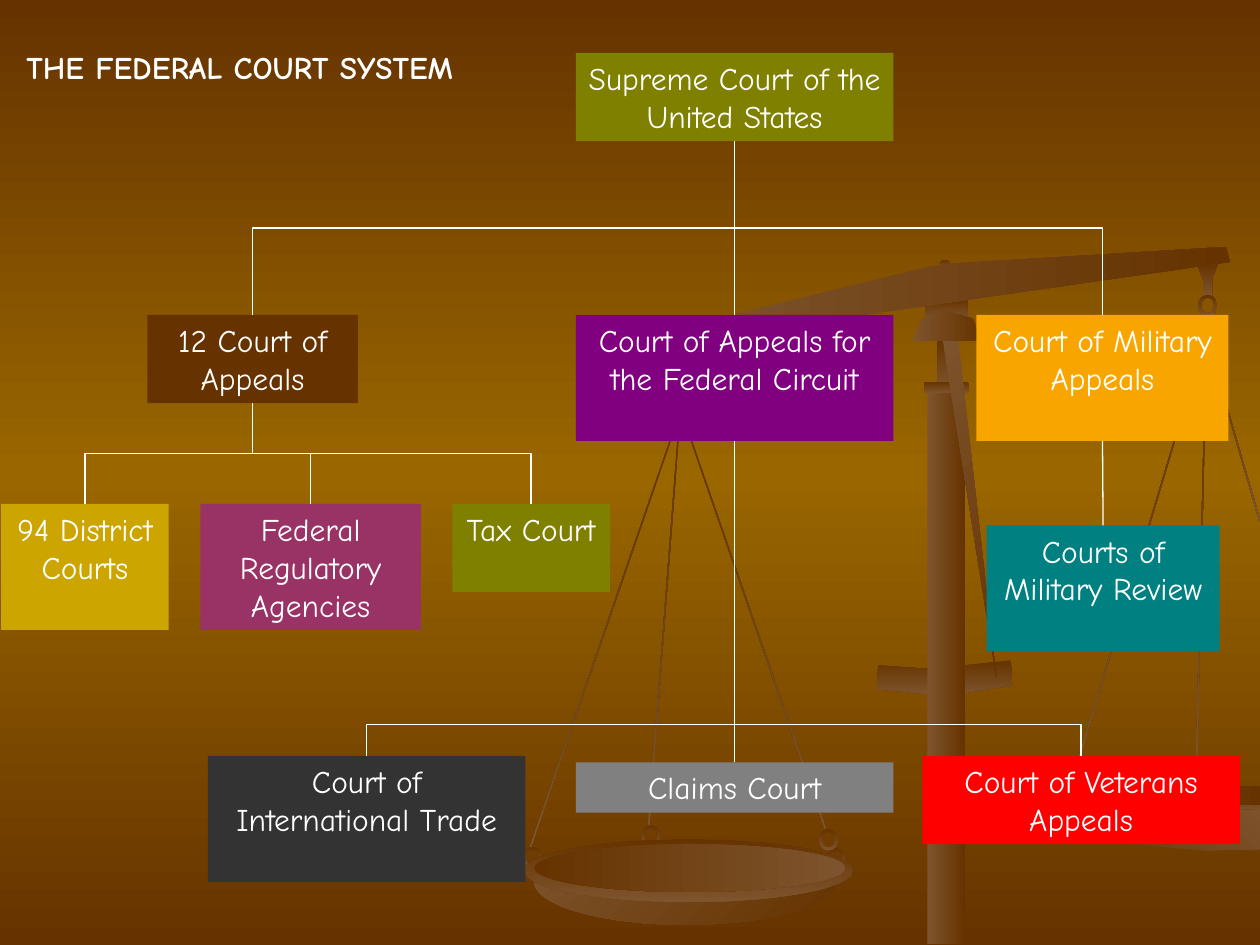
from copy import deepcopy
from dataclasses import dataclass
from math import atan2, degrees, hypot
from typing import Union

from lxml.etree import SubElement
from pptx import Presentation
from pptx.dml.color import RGBColor
from pptx.enum.shapes import MSO_CONNECTOR as Connector, MSO_SHAPE as Preset
from pptx.enum.text import MSO_ANCHOR as Anchor, MSO_AUTO_SIZE as AutoSize, PP_ALIGN as Align
from pptx.oxml.ns import qn
from pptx.util import Pt

PX = 9144
FONT = "Comic Neue"
WHITE = RGBColor.from_string("FFFFFF")
BROWN = RGBColor.from_string("663300")
GOLD = RGBColor.from_string("996600")
BRONZE = RGBColor.from_string("7E542E")
OLIVE = RGBColor.from_string("808000")
PURPLE = RGBColor.from_string("800080")
PLUM = RGBColor.from_string("993366")
MUSTARD = RGBColor.from_string("CCA500")
ORANGE = RGBColor.from_string("F8A500")
TEAL = RGBColor.from_string("008080")
CHARCOAL = RGBColor.from_string("333333")
GRAY = RGBColor.from_string("808080")
RED = RGBColor.from_string("FF0000")
DARK_TO_LIGHT = (BROWN, BRONZE)
LIGHT_TO_DARK = (BRONZE, BROWN)
TOP, BOTTOM = 0, 2


@dataclass(frozen=True)
class Part:
    preset: Preset
    box: tuple
    rotation: float = 0
    colors: tuple = DARK_TO_LIGHT
    angle: int = 90


@dataclass(frozen=True)
class Outline:
    points: list
    colors: tuple = DARK_TO_LIGHT
    angle: int = 90


@dataclass(frozen=True)
class Court:
    name: str
    center: int
    top: int
    width: int
    height: int
    color: RGBColor


@dataclass(frozen=True)
class Branch:
    parent: str
    children: tuple
    side: int = BOTTOM
    bend: float = 0.5


def rope(apex: tuple, end: tuple) -> Part:
    across, down = apex[0] - end[0], end[1] - apex[1]
    length = round(hypot(across, down))
    left, top = (apex[0] + end[0]) // 2, (apex[1] + end[1] - length) // 2
    return Part(Preset.RECTANGLE, (left, top, 1, length), degrees(atan2(across, down)))


def ring(left: int, top: int) -> Part:
    return Part(Preset.DONUT, (left, top, 15, 17))


LEFT_APEX, RIGHT_APEX = (540, 325), (957, 266)
SCALES = [
    Part(Preset.RECTANGLE, (734, 237, 34, 18)),
    Part(Preset.OVAL, (746, 206, 8, 8)),
    *[rope(RIGHT_APEX, end) for end in ((853, 612), (949, 613), (1000, 414))],
    *[rope(LEFT_APEX, end) for end in ((655, 658), (420, 674), (515, 655))],
    Outline([(697, 528), (739, 531), (802, 524), (804, 544), (751, 552), (696, 547)]),
    Outline([(1000, 626), (865, 623), (827, 628), (852, 638), (914, 644), (1000, 645)]),
    Outline([(831, 633), (852, 657), (892, 670), (957, 675), (1000, 674), (1000, 643),
             (886, 640)], angle=315),
    Outline([(1000, 624), (862, 623), (834, 628), (893, 637), (1000, 639)], LIGHT_TO_DARK, 0),
    Outline([(967, 209), (950, 210), (955, 222), (955, 236), (962, 236), (962, 221)]),
    *[ring(*corner) for corner in ((951, 234), (950, 250))],
    Outline([(973, 196), (976, 208), (525, 273), (524, 264), (737, 212), (759, 209)],
            LIGHT_TO_DARK, 0),
    *[ring(*corner) for corner in ((509, 655), (656, 673), (415, 672))],
    Part(Preset.OVAL, (424, 666, 240, 68), 0, LIGHT_TO_DARK, 45),
    Part(Preset.OVAL, (416, 666, 261, 50)),
    Part(Preset.OVAL, (424, 670, 247, 38), angle=0),
    ring(650, 658),
    Part(Preset.RECTANGLE, (736, 308, 30, 441), 0, LIGHT_TO_DARK, 0),
    Part(Preset.RECTANGLE, (744, 268, 13, 42)),
    Part(Preset.ROUNDED_RECTANGLE, (733, 303, 36, 9)),
    Outline([(791, 539), (748, 268), (760, 265)], LIGHT_TO_DARK, 45),
    Outline([(752, 247), (772, 253), (779, 271), (724, 271), (732, 253)], LIGHT_TO_DARK, 0),
]

SUPREME = "Supreme Court of the United States"
FEDERAL = "Court of Appeals for the Federal Circuit"
APPEALS = "12 Court of Appeals"
TAX = "Tax Court"
AGENCIES = "Federal Regulatory Agencies"
DISTRICT = "94 District Courts"
MILITARY = "Court of Military Appeals"
REVIEW = "Courts of Military Review"
TRADE = "Court of International Trade"
CLAIMS = "Claims Court"
VETERANS = "Court of Veterans Appeals"

MIDDLE, WIDE = 583, 252
SHORT, MEDIUM, TALL = 40, 70, 100
APPEALS_ROW, LOWER_ROW, SPECIAL_ROW = 250, 400, 600
COURTS = [
    Court(SUPREME, MIDDLE, 42, WIDE, MEDIUM, OLIVE),
    Court(FEDERAL, MIDDLE, APPEALS_ROW, WIDE, TALL, PURPLE),
    Court(APPEALS, 200, APPEALS_ROW, 167, MEDIUM, BROWN),
    Court(TAX, 421, LOWER_ROW, 125, MEDIUM, OLIVE),
    Court(AGENCIES, 246, LOWER_ROW, 175, TALL, PLUM),
    Court(DISTRICT, 67, LOWER_ROW, 133, TALL, MUSTARD),
    Court(MILITARY, 875, APPEALS_ROW, 200, TALL, ORANGE),
    Court(REVIEW, 875, 417, 185, TALL, TEAL),
    Court(TRADE, 291, SPECIAL_ROW, WIDE, TALL, CHARCOAL),
    Court(CLAIMS, MIDDLE, 605, WIDE, SHORT, GRAY),
    Court(VETERANS, 858, SPECIAL_ROW, WIDE, MEDIUM, RED),
]
BRANCHES = [
    Branch(SUPREME, (FEDERAL, APPEALS, MILITARY)),
    Branch(MILITARY, (REVIEW,)),
    Branch(APPEALS, (DISTRICT, TAX, AGENCIES)),
    Branch(FEDERAL, (CLAIMS,)),
    Branch(CLAIMS, (TRADE, VETERANS), TOP, 6),
]


def emu(box: tuple) -> list:
    return [length * PX for length in box]


def draw_part(slide, part: Union[Part, Outline]) -> None:
    if isinstance(part, Part):
        shape = slide.shapes.add_shape(part.preset, *emu(part.box))
        shape.rotation = part.rotation
        if part.preset == Preset.DONUT:
            shape.adjustments[0] = 0.15
    else:
        builder = slide.shapes.build_freeform(*part.points[0], scale=PX)
        builder.add_line_segments(part.points[1:])
        shape = builder.convert_to_shape()
    shape.shadow.inherit = False
    shape.line.fill.background()
    shape.fill.gradient()
    shape.fill.gradient_angle = -part.angle % 360
    for stop, color in zip(shape.fill.gradient_stops, part.colors):
        stop.color.rgb = color


def write(shape, text: str, align: Align, bold: bool, wrap: bool) -> None:
    frame = shape.text_frame
    frame.text = text
    frame.word_wrap = wrap
    frame.auto_size = AutoSize.SHAPE_TO_FIT_TEXT
    frame.vertical_anchor = Anchor.TOP
    paragraph = frame.paragraphs[0]
    paragraph.alignment = align
    font = paragraph.font
    font.name, font.size, font.bold, font.color.rgb = FONT, Pt(18), bold, WHITE


def draw_court(slide, court: Court):
    box = (court.center - court.width // 2, court.top, court.width, court.height)
    shape = slide.shapes.add_shape(Preset.RECTANGLE, *emu(box))
    shape.shadow.inherit = False
    shape.line.fill.background()
    shape.fill.solid()
    shape.fill.fore_color.rgb = court.color
    write(shape, court.name, Align.CENTER, False, True)
    return shape


def route_vertically(connector, bend: float) -> None:
    x1, y1, x2, y2 = connector.begin_x, connector.begin_y, connector.end_x, connector.end_y
    across, down = x2 - x1, y2 - y1
    connector.width, connector.height = abs(down), abs(across)
    connector.left = (x1 + x2 - abs(down)) // 2
    connector.top = (y1 + y2 - abs(across)) // 2
    properties = connector._element.spPr
    transform = properties.find(qn("a:xfrm"))
    transform.attrib.pop("flipV", None)
    transform.set("rot", str((90 if across < 0 else 270) * 60000))
    transform.set("flipH", str(int((across > 0) != (down < 0))))
    adjustments = properties.find(qn("a:prstGeom")).find(qn("a:avLst"))
    SubElement(adjustments, qn("a:gd"), name="adj1", fmla=f"val {round(bend * 100000)}")


def draw_branch(slide, branch: Branch, shapes: dict) -> None:
    parent = shapes[branch.parent]
    for name in branch.children:
        child = shapes[name]
        offset = child.left + child.width // 2 - parent.left - parent.width // 2
        straight = abs(offset) <= PX
        kind = Connector.STRAIGHT if straight else Connector.ELBOW
        connector = slide.shapes.add_connector(kind, 0, 0, 0, 0)
        connector.begin_connect(parent, branch.side)
        connector.end_connect(child, TOP)
        if not straight:
            route_vertically(connector, branch.bend)
        connector.line.color.rgb = WHITE
        connector.line.width = Pt(0.75)
        SubElement(connector._element.spPr, qn("a:effectLst"))


def paint_background(slide) -> None:
    fill = slide.background.fill
    fill.gradient()
    fill.gradient_angle = 270
    first = fill.gradient_stops[0]._gs
    first.addnext(deepcopy(first))
    for stop, color, position in zip(fill.gradient_stops, (BROWN, GOLD, BROWN), (0, 0.5, 1)):
        stop.color.rgb = color
        stop.position = position


presentation = Presentation()
presentation.slide_width, presentation.slide_height = emu((1000, 750))
slide = presentation.slides.add_slide(presentation.slide_layouts[5])
paint_background(slide)
for part in SCALES:
    draw_part(slide, part)
shapes = {court.name: draw_court(slide, court) for court in COURTS}
for branch in BRANCHES:
    draw_branch(slide, branch, shapes)
title = slide.shapes.title
title.left, title.top, title.width, title.height = emu((11, 33, 410, 40))
write(title, "THE FEDERAL COURT SYSTEM", Align.LEFT, True, False)
presentation.save("out.pptx")
